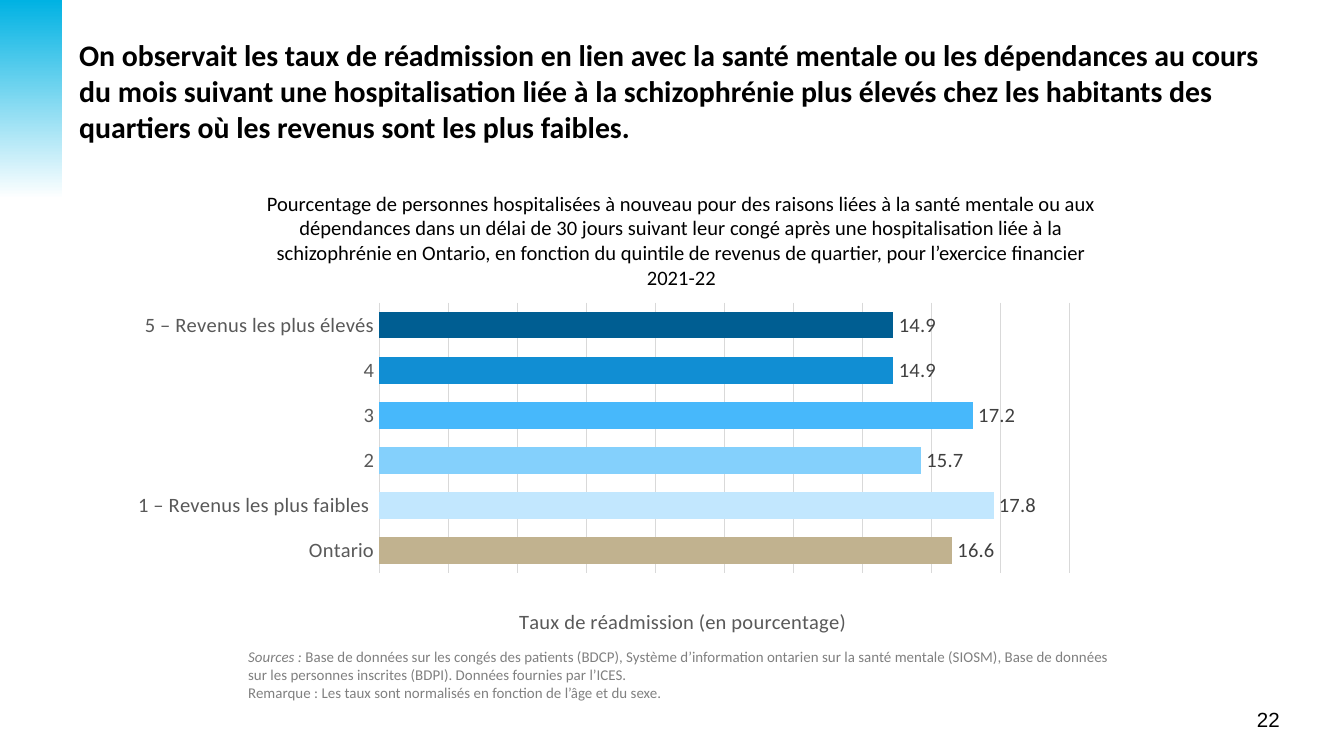
from lxml import etree
from pptx import Presentation
from pptx import util as u
from pptx.chart.data import CategoryChartData
from pptx.dml.color import RGBColor
from pptx.enum import chart as ch
from pptx.enum import shapes, text
from pptx.oxml.ns import qn

BLACK = RGBColor(0x00, 0x00, 0x00)
WHITE = RGBColor(0xFF, 0xFF, 0xFF)
CYAN = RGBColor(0x00, 0xB2, 0xE3)
SOURCE_GREY = RGBColor(0x80, 0x80, 0x80)
AXIS_GREY = RGBColor(0x59, 0x59, 0x59)
LABEL_GREY = RGBColor(0x40, 0x40, 0x40)
GRID_GREY = RGBColor(0xD9, 0xD9, 0xD9)

# Each text is a list of paragraphs, each paragraph a list of (words, italic).
HEADING = [[(
    "On observait les taux de réadmission en lien avec la santé mentale ou les dépendances "
    "au cours du mois suivant une hospitalisation liée à la schizophrénie plus élevés chez "
    "les habitants des quartiers où les revenus sont les plus faibles.", False)]]
CAPTION = [[(
    "Pourcentage de personnes hospitalisées à nouveau pour des raisons liées à la santé "
    "mentale ou aux dépendances dans un délai de 30 jours suivant leur congé après une "
    "hospitalisation liée à la schizophrénie en Ontario, en fonction du quintile de revenus "
    "de quartier, pour l’exercice financier 2021-22", False)]]
SOURCES = [
    [("Sources : ", True),
     ("Base de données sur les congés des patients (BDCP), Système d’information ontarien "
      "sur la santé mentale (SIOSM), Base de données sur les personnes inscrites (BDPI). "
      "Données fournies par l’ICES.", False)],
    [("Remarque : Les taux sont normalisés en fonction de l’âge et du sexe.", False)],
]
PAGE_NUMBER = [[("22", False)]]
AXIS_TITLE = "Taux de réadmission (en pourcentage)"

# Bars from bottom to top: category, rate, colour
RATES = [
    ("Ontario", 16.6, RGBColor(0xC1, 0xB2, 0x8F)),
    ("1 – Revenus les plus faibles ", 17.8, RGBColor(0xC2, 0xE7, 0xFE)),
    ("2", 15.7, RGBColor(0x84, 0xD0, 0xFC)),
    ("3", 17.2, RGBColor(0x47, 0xB8, 0xFB)),
    ("4", 14.9, RGBColor(0x11, 0x8E, 0xD3)),
    ("5 – Revenus les plus élevés", 14.9, RGBColor(0x00, 0x5E, 0x92)),
]

SCALE = 914400 / 134.4
CHART_BOX = (117, 296, 972, 345)


def px(*lengths):
    return [u.Emu(round(length * SCALE)) for length in lengths]


def style(font, size, color, name="Calibri", bold=False):
    font.size, font.name, font.bold = u.Pt(size), name, bold
    font.color.rgb = color


def add_text(page, box, paragraphs, size, color, name="Calibri", bold=False,
             align=text.PP_ALIGN.LEFT):
    frame = page.shapes.add_textbox(*px(*box)).text_frame
    frame.word_wrap = True
    for i, parts in enumerate(paragraphs):
        para = frame.add_paragraph() if i else frame.paragraphs[0]
        para.alignment = align
        for words, italic in parts:
            span = para.add_run()
            span.text = words
            style(span.font, size, color, name, bold)
            span.font.italic = italic


def place(element, **settings):
    """Give a plot area or title a manual layout inside the chart."""
    layout = element.find(qn("c:layout"))
    if layout is None:
        layout = etree.Element(qn("c:layout"))
        element.insert(0, layout)
    manual = etree.SubElement(layout, qn("c:manualLayout"))
    for tag, value in settings.items():
        etree.SubElement(manual, qn("c:" + tag)).set("val", str(value))


def add_rates_chart(page):
    data = CategoryChartData(number_format="0.0")
    data.categories = [category for category, _, _ in RATES]
    data.add_series("Series 1", [rate for _, rate, _ in RATES])
    chart = page.shapes.add_chart(
        ch.XL_CHART_TYPE.BAR_CLUSTERED, *px(*CHART_BOX), data).chart
    chart.has_legend = chart.has_title = False
    style(chart.font, 10, BLACK, "Arial")

    plot = chart.plots[0]
    plot.gap_width = 70
    plot.vary_by_categories = False
    series = plot.series[0]
    series.format.fill.solid()
    series.format.fill.fore_color.rgb = CYAN
    for i, (_, _, color) in enumerate(RATES):
        fill = series.points[i].format.fill
        fill.solid()
        fill.fore_color.rgb = color
    labels = series.data_labels
    labels.show_value = True
    labels.number_format, labels.number_format_is_linked = "0.0", False
    labels.position = ch.XL_LABEL_POSITION.OUTSIDE_END
    style(labels.font, 11, LABEL_GREY)

    categories = chart.category_axis
    categories.major_tick_mark = categories.minor_tick_mark = ch.XL_TICK_MARK.NONE
    style(categories.tick_labels.font, 11, AXIS_GREY)
    values = chart.value_axis
    values.minimum_scale, values.maximum_scale, values.major_unit = 0, 20, 2
    values.has_major_gridlines = True
    values.visible = False
    for line in (categories.format.line, values.major_gridlines.format.line):
        line.color.rgb = GRID_GREY
        line.width = u.Pt(0.75)
    title = values.axis_title.text_frame
    title.text = AXIS_TITLE
    style(title.paragraphs[0].runs[0].font, 11, AXIS_GREY)

    plot_area = chart._chartSpace.find(".//" + qn("c:plotArea"))
    place(plot_area, layoutTarget="inner", xMode="edge", yMode="edge",
          x=0.27, y=0.02, w=0.71, h=0.79)
    place(plot_area.find(".//" + qn("c:title")), xMode="edge", yMode="edge", x=0.41, y=0.9)


def add_corner_band(page):
    band = page.shapes.add_shape(shapes.MSO_SHAPE.RECTANGLE, *px(0, 0, 62, 199))
    band.shadow.inherit = False
    band.line.fill.background()
    band.fill.gradient()
    band.fill.gradient_angle = 270
    for stop, color in zip(band.fill.gradient_stops, (CYAN, WHITE)):
        stop.color.rgb = color


def main():
    deck = Presentation()
    deck.slide_width, deck.slide_height = px(1344, 756)
    page = deck.slides.add_slide(deck.slide_layouts[6])
    add_text(page, (1136, 700, 157, 39), PAGE_NUMBER, 11, BLACK, "Arial",
             align=text.PP_ALIGN.RIGHT)
    add_corner_band(page)
    add_text(page, (66, 30, 1230, 129), HEADING, 16, BLACK, bold=True)
    add_rates_chart(page)
    add_text(page, (235, 641, 894, 67), SOURCES, 8, SOURCE_GREY)
    add_text(page, (253, 184, 857, 168), CAPTION, 11, BLACK, align=text.PP_ALIGN.CENTER)
    deck.save("out.pptx")


if __name__ == "__main__":
    main()
